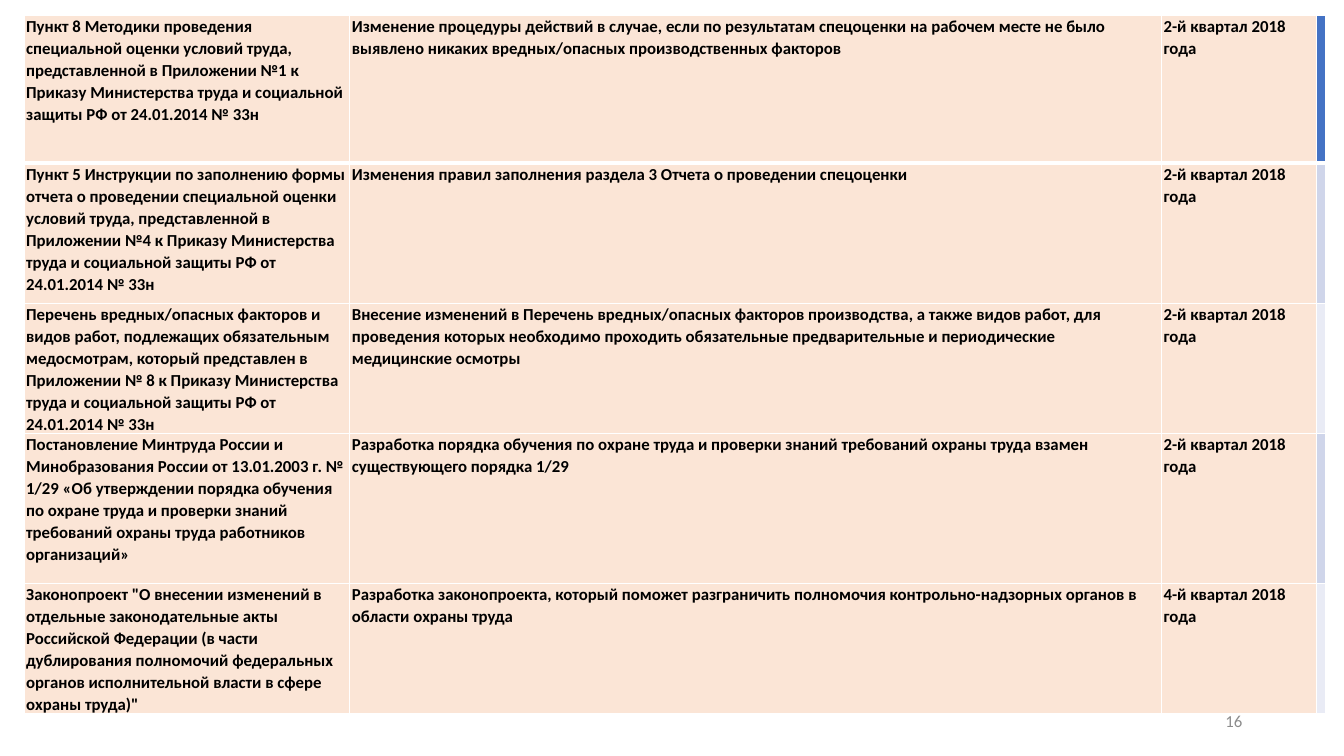
"""Builds a slide with a table of planned labour-safety regulation changes."""
import lxml.etree
import pptx
import pptx.dml.color
import pptx.enum.text
import pptx.oxml.ns
import pptx.util

Inches, Pt = pptx.util.Inches, pptx.util.Pt
RGBColor = pptx.dml.color.RGBColor

ROWS = [
    ("Пункт 8 Методики проведения специальной оценки условий труда, представленной в Приложении №1 "
     "к Приказу Министерства труда и социальной защиты РФ от 24.01.2014 № 33н",
     "Изменение процедуры действий в случае, если по результатам спецоценки на рабочем месте не было "
     "выявлено никаких вредных/опасных производственных факторов",
     "2-й квартал 2018 года", ""),
    ("Пункт 5 Инструкции по заполнению формы отчета о проведении специальной оценки условий труда, "
     "представленной в Приложении №4 к Приказу Министерства труда и социальной защиты РФ "
     "от 24.01.2014 № 33н",
     "Изменения правил заполнения раздела 3 Отчета о проведении спецоценки",
     "2-й квартал 2018 года", ""),
    ("Перечень вредных/опасных факторов и видов работ, подлежащих обязательным медосмотрам, который "
     "представлен в Приложении № 8 к Приказу Министерства труда и социальной защиты РФ "
     "от 24.01.2014 № 33н",
     "Внесение изменений в Перечень вредных/опасных факторов производства, а также видов работ, для "
     "проведения которых необходимо проходить обязательные предварительные и периодические "
     "медицинские осмотры",
     "2-й квартал 2018 года", ""),
    ("Постановление Минтруда России и Минобразования России от 13.01.2003 г. № 1/29 «Об утверждении "
     "порядка обучения по охране труда и проверки знаний требований охраны труда работников "
     "организаций»",
     "Разработка порядка обучения по охране труда и проверки знаний требований охраны труда взамен "
     "существующего порядка 1/29",
     "2-й квартал 2018 года", ""),
    ("Законопроект \"О внесении изменений в отдельные законодательные акты Российской Федерации "
     "(в части дублирования полномочий федеральных органов исполнительной власти в сфере охраны "
     "труда)\"",
     "Разработка законопроекта, который поможет разграничить полномочия контрольно-надзорных органов "
     "в области охраны труда",
     "4-й квартал 2018 года", ""),
]
PAGE_NUMBER = "16"
COL_WIDTHS = [3.23, 8.05, 1.54, 0.09]
ROW_HEIGHTS = [1.47, 1.39, 1.29, 1.49, 1.29]
FONT = "Calibri"

PEACH = RGBColor(0xFB, 0xE5, 0xD6)
BLUE = RGBColor(0x44, 0x72, 0xC4)
BAND_DARK = RGBColor(0xCF, 0xD5, 0xEA)
BAND_LIGHT = RGBColor(0xE9, 0xEB, 0xF5)
BLACK = RGBColor(0, 0, 0)
GREY = RGBColor(0x8C, 0x8C, 0x8C)
WHITE = RGBColor(0xFF, 0xFF, 0xFF)
EDGE_FILLS = [BLUE, BAND_DARK, BAND_LIGHT, BAND_DARK, BAND_LIGHT]


def set_borders(cell, top, bottom):
    """Draw white borders with the given top and bottom widths in points."""
    qn = pptx.oxml.ns.qn
    tc_pr = cell._tc.get_or_add_tcPr()
    for side, width in (("L", 1), ("R", 1), ("T", top), ("B", bottom)):
        ln = lxml.etree.SubElement(tc_pr, qn("a:ln" + side), w=str(Pt(width)))
        fill = lxml.etree.SubElement(ln, qn("a:solidFill"))
        lxml.etree.SubElement(fill, qn("a:srgbClr"), val=str(WHITE))


def style_font(font, color, bold):
    """Apply the slide's font in the given colour and weight."""
    font.name, font.size, font.bold = FONT, Pt(12), bold
    font.color.rgb = color


def add_page_number(slide):
    """Add the right-aligned page number."""
    tf = slide.shapes.add_textbox(Inches(9.42), Inches(6.95), Inches(3), Inches(0.4)).text_frame
    tf.word_wrap = True
    tf.vertical_anchor = pptx.enum.text.MSO_ANCHOR.MIDDLE
    p = tf.paragraphs[0]
    p.text = PAGE_NUMBER
    p.alignment = pptx.enum.text.PP_ALIGN.RIGHT
    style_font(p.font, GREY, False)


def add_plan_table(slide):
    """Add the table of documents, changes and deadlines."""
    table = slide.shapes.add_table(
        len(ROWS), len(COL_WIDTHS), Inches(0.24), Inches(0.15),
        Inches(sum(COL_WIDTHS)), Inches(sum(ROW_HEIGHTS))).table
    for column, width in zip(table.columns, COL_WIDTHS):
        column.width = Inches(width)
    for i, (row, height) in enumerate(zip(table.rows, ROW_HEIGHTS)):
        row.height = Inches(height)
        for cell, text, fill in zip(row.cells, ROWS[i], [PEACH] * 3 + [EDGE_FILLS[i]]):
            cell.margin_left = cell.margin_right = Inches(0.02)
            cell.margin_top = cell.margin_bottom = 0
            set_borders(cell, 3 if i == 1 else 1, 3 if i == 0 else 1)
            cell.fill.solid()
            cell.fill.fore_color.rgb = fill
            p = cell.text_frame.paragraphs[0]
            p.text = text
            p.line_spacing = 1.07
            style_font(p.font, BLACK, True)


def main():
    """Build and save the slide."""
    prs = pptx.Presentation()
    prs.slide_width, prs.slide_height = Inches(13.33), Inches(7.5)
    slide = prs.slides.add_slide(prs.slide_layouts[6])
    add_page_number(slide)
    add_plan_table(slide)
    prs.save("out.pptx")


if __name__ == "__main__":
    main()
